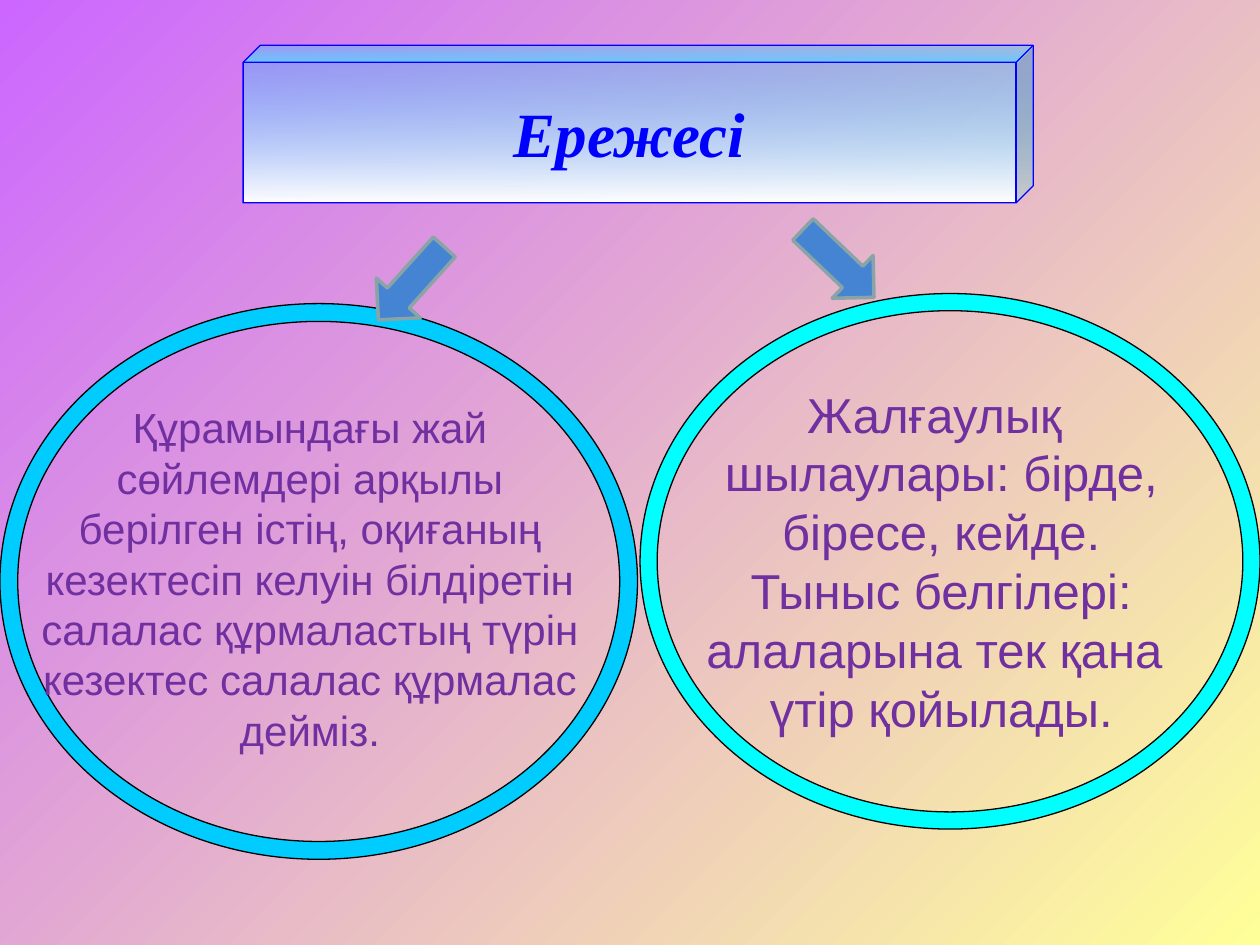
import pptx
import pptx.util
import pptx.dml.color
import pptx.enum.shapes
import pptx.enum.text
import pptx.oxml
import pptx.oxml.ns

RGBColor = pptx.dml.color.RGBColor
Inches = pptx.util.Inches
Pt = pptx.util.Pt
MSO_SHAPE = pptx.enum.shapes.MSO_SHAPE

VIOLET = RGBColor(0xCC, 0x66, 0xFF)
CREAM = RGBColor(0xFF, 0xFF, 0x99)
SKY = RGBColor(0x31, 0xB6, 0xFD)
WHITE = RGBColor(0xFF, 0xFF, 0xFF)
BLUE = RGBColor(0x00, 0x00, 0xFF)
BLACK = RGBColor(0x00, 0x00, 0x00)
RING_BLUE = RGBColor(0x00, 0xCC, 0xFF)
RING_CYAN = RGBColor(0x00, 0xFF, 0xFF)
ARROW_BLUE = RGBColor(0x45, 0x84, 0xD3)
ARROW_EDGE = RGBColor(0x89, 0xA4, 0xA7)
PURPLE = RGBColor(0x70, 0x30, 0xA0)

RING_SHARE = 0.032  # ring thickness as a share of the ring's height
ARROW_SIZE = (0.47, 0.78)

DEFINITION = [
    "Құрамындағы жай сөйлемдері арқылы берілген істің, оқиғаның "
    "кезектесіп келуін білдіретін салалас құрмаластың түрін "
    "кезектес салалас құрмалас дейміз.",
]
CONJUNCTIONS = [
    "Жалғаулық ",
    "шылаулары: бірде, біресе, кейде.\vТыныс белгілері: алаларына тек қана ",
    "үтір қойылады.",
]


def set_gradient(fill, first, last, clockwise_angle):
    fill.gradient()
    fill.gradient_angle = 360 - clockwise_angle
    for stop, color in zip(fill.gradient_stops, (first, last)):
        stop.color.rgb = color


def add_preset(slide, kind, box, line_color, line_width, fill_color=None):
    shape = slide.shapes.add_shape(kind, *map(Inches, box))
    shape.shadow.inherit = False
    shape.line.color.rgb = line_color
    shape.line.width = Pt(line_width)
    if fill_color is not None:
        shape.fill.solid()
        shape.fill.fore_color.rgb = fill_color
    return shape


def format_text(text_frame, font_name, size, color, emphasis=False):
    for paragraph in text_frame.paragraphs:
        paragraph.alignment = pptx.enum.text.PP_ALIGN.CENTER
        for run in paragraph.runs:
            run.font.name = font_name
            run.font.size = Pt(size)
            run.font.color.rgb = color
            run.font.bold = run.font.italic = emphasis


def add_title(slide, box):
    cube = add_preset(slide, MSO_SHAPE.CUBE, box, BLUE, 0.75)
    cube.adjustments[0] = 0.108
    set_gradient(cube.fill, SKY, WHITE, 90)
    # The first colour lets the background through
    first_color = cube._element.spPr.find(".//" + pptx.oxml.ns.qn("a:srgbClr"))
    first_color.append(pptx.oxml.parse_xml(
        '<a:alpha %s val="40000"/>' % pptx.oxml.ns.nsdecls("a")))

    text_frame = cube.text_frame
    text_frame.word_wrap = False
    text_frame.vertical_anchor = pptx.enum.text.MSO_ANCHOR.MIDDLE
    text_frame.margin_left = text_frame.margin_right = 0
    text_frame.margin_top = text_frame.margin_bottom = 0
    text_frame.text = "Ережесі"
    format_text(text_frame, "Times New Roman", 36, BLUE, emphasis=True)


def add_ring(slide, box, color):
    ring = add_preset(slide, MSO_SHAPE.DONUT, box, BLACK, 0.75, color)
    ring.adjustments[0] = RING_SHARE


def add_arrow(slide, left, top, rotation):
    arrow = add_preset(slide, MSO_SHAPE.DOWN_ARROW, (left, top, *ARROW_SIZE),
                       ARROW_EDGE, 2, ARROW_BLUE)
    arrow.rotation = rotation


def add_rule_text(slide, box, paragraphs, size):
    text_frame = slide.shapes.add_textbox(*map(Inches, box)).text_frame
    text_frame.word_wrap = True
    text_frame.text = paragraphs[0]
    for text in paragraphs[1:]:
        text_frame.add_paragraph().text = text
    format_text(text_frame, "Arial", size, PURPLE)


def main():
    presentation = pptx.Presentation()
    presentation.slide_width = Inches(10)
    presentation.slide_height = Inches(7.5)
    slide = presentation.slides.add_slide(presentation.slide_layouts[6])
    set_gradient(slide.background.fill, VIOLET, CREAM, 45)

    # Rings
    add_ring(slide, (0, 2.41, 5.06, 4.41), RING_BLUE)
    add_ring(slide, (5.08, 2.33, 4.92, 4.25), RING_CYAN)

    # Arrows from the title to the rings
    add_arrow(slide, 6.42, 1.7, 313.7)
    add_arrow(slide, 3.03, 1.86, 42.1)

    # Title and the two rules
    add_title(slide, (1.93, 0.36, 6.27, 1.25))
    add_rule_text(slide, (0.16, 3.14, 4.6, 3.33), DEFINITION, 24)
    add_rule_text(slide, (5.06, 3, 4.82, 3.4), CONJUNCTIONS, 28)

    presentation.save("out.pptx")


if __name__ == "__main__":
    main()
